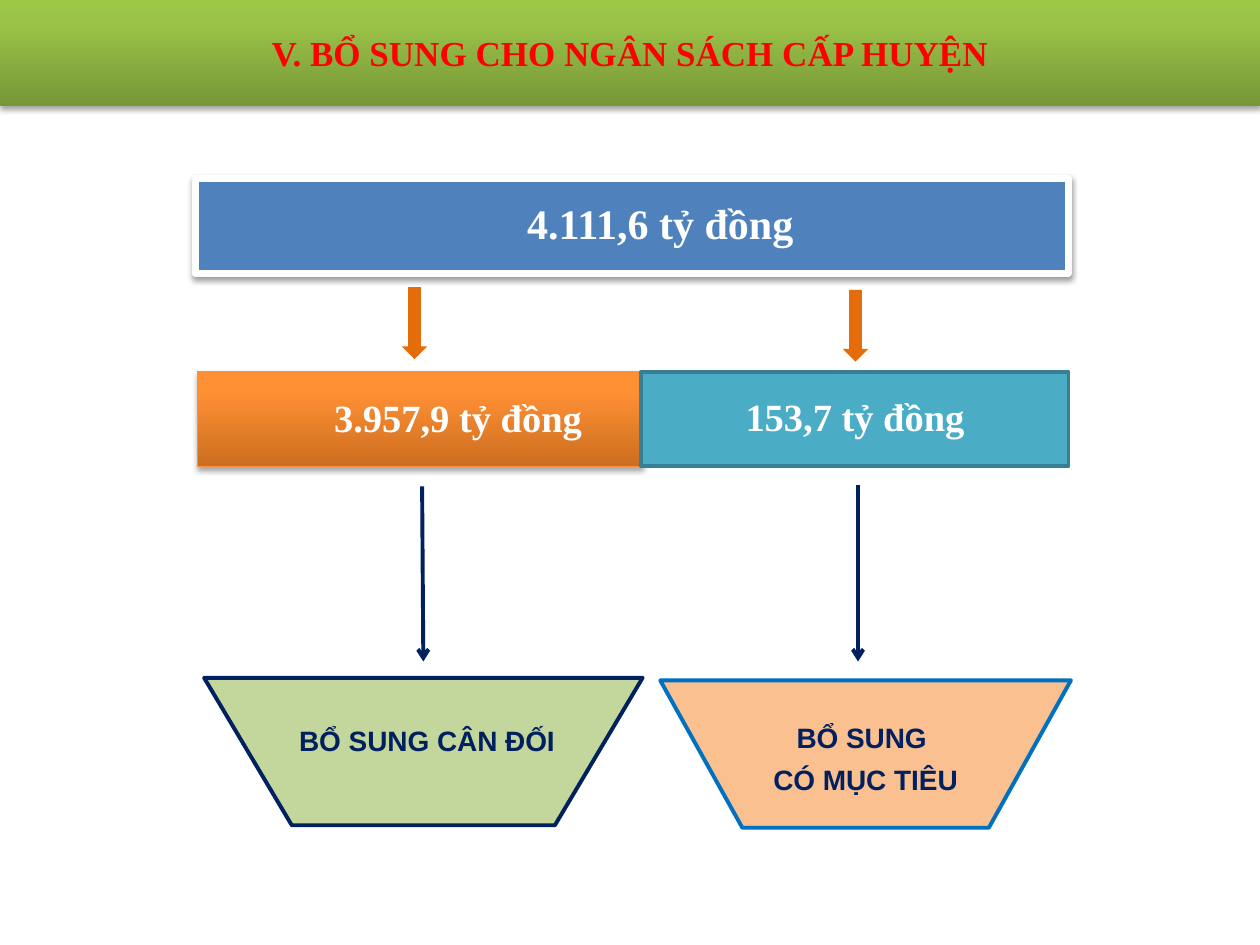
import dataclasses

import lxml.etree
import pptx
import pptx.dml.color
import pptx.enum.shapes
import pptx.enum.text
import pptx.oxml.ns
import pptx.util

Inches = pptx.util.Inches
Pt = pptx.util.Pt
Shape = pptx.enum.shapes.MSO_SHAPE
qn = pptx.oxml.ns.qn


@dataclasses.dataclass(frozen=True)
class Theme:
    serif: str = "Times New Roman"
    sans: str = "Arial"
    title_size: int = 20
    total_size: int = 24
    amount_size: int = 22
    label_size: int = 16
    label_spacing: int = 24
    outline: float = 2.25
    white: str = "FFFFFF"
    red: str = "FF0000"
    navy: str = "002060"
    blue: str = "4F81BD"
    bright_blue: str = "0070C0"
    teal: str = "4BACC6"
    dark_teal: str = "377F92"
    orange: str = "E46C0A"
    orange_edge: str = "F69240"
    pale_green: str = "C3D69B"
    pale_orange: str = "FAC090"
    # Gradients run from bottom to top: position in percent, colour
    green_gradient: tuple = ((0, "779737"), (80, "9BC348"), (100, "9DC746"))
    orange_gradient: tuple = ((0, "CC6E20"), (80, "FF9034"), (100, "FF9136"))


THEME = Theme()


def rgb(color):
    return pptx.dml.color.RGBColor.from_string(color)


def add_child(parent, tag, **attributes):
    values = {name: str(value) for name, value in attributes.items()}
    return lxml.etree.SubElement(parent, qn(tag), values)


def fill_gradient(shape, stops):
    shape.fill.gradient()
    shape.fill.gradient_angle = 90
    stop_list = shape.element.spPr.find(".//" + qn("a:gsLst"))
    stop_list.clear()
    for position, color in stops:
        stop = add_child(stop_list, "a:gs", pos=position * 1000)
        add_child(stop, "a:srgbClr", val=color)


def add_shadow(shape, opacity, distance):
    effects = shape.element.spPr.find(qn("a:effectLst"))
    shadow = add_child(effects, "a:outerShdw", blurRad=Pt(3.1), dist=Pt(distance),
                       dir=90 * 60000, rotWithShape=0)
    color = add_child(shadow, "a:srgbClr", val="000000")
    add_child(color, "a:alpha", val=opacity * 1000)


def add_block(page, kind, place, fill, line=None, width=THEME.outline):
    """Add a preset shape; fill is one colour or a tuple of gradient stops."""
    shape = page.shapes.add_shape(kind, *map(Inches, place))
    shape.shadow.inherit = False
    if isinstance(fill, tuple):
        fill_gradient(shape, fill)
    else:
        shape.fill.solid()
        shape.fill.fore_color.rgb = rgb(fill)
    if line:
        shape.line.color.rgb = rgb(line)
        shape.line.width = Pt(width)
    else:
        shape.line.fill.background()
    return shape


def write(frame, lines, font, size, color, spacing=None):
    frame.word_wrap = True
    for index, line in enumerate(lines):
        para = frame.add_paragraph() if index else frame.paragraphs[0]
        para.text = line
        para.alignment = pptx.enum.text.PP_ALIGN.CENTER
        para.font.name = font
        para.font.size = Pt(size)
        para.font.bold = True
        para.font.color.rgb = rgb(color)
        if spacing:
            para.line_spacing = Pt(spacing)


def add_text(page, place, lines, *style):
    box = page.shapes.add_textbox(*map(Inches, place))
    write(box.text_frame, lines, *style)
    box.text_frame.auto_size = pptx.enum.text.MSO_AUTO_SIZE.SHAPE_TO_FIT_TEXT


def add_arrow(page, start, end):
    arrow = page.shapes.add_connector(pptx.enum.shapes.MSO_CONNECTOR.STRAIGHT,
                                      *map(Inches, start + end))
    arrow.line.color.rgb = rgb(THEME.navy)
    arrow.line.width = Pt(THEME.outline)
    add_child(arrow.line._get_or_add_ln(), "a:tailEnd", type="arrow")
    add_child(arrow.element.spPr, "a:effectLst")


def add_title(page):
    banner = add_block(page, Shape.RECTANGLE, (0, 0, 10, 0.84), THEME.green_gradient)
    add_shadow(banner, 35, 1.8)
    frame = banner.text_frame
    frame.margin_left = frame.margin_right = frame.margin_top = frame.margin_bottom = 0
    frame.vertical_anchor = pptx.enum.text.MSO_ANCHOR.MIDDLE
    write(frame, ["V. BỔ SUNG CHO NGÂN SÁCH CẤP HUYỆN"],
          THEME.serif, THEME.title_size, THEME.red)


def add_total(page):
    bar = add_block(page, Shape.RECTANGLE, (1.55, 1.42, 6.93, 0.75),
                    THEME.blue, THEME.white, 4)
    add_shadow(bar, 38, 1.6)
    add_text(page, (3.08, 1.52, 4.32, 0.5), ["4.111,6 tỷ đồng"],
             THEME.serif, THEME.total_size, THEME.white)


def add_amounts(page):
    balance = add_block(page, Shape.RECTANGLE, (1.57, 2.95, 3.53, 0.75),
                        THEME.orange_gradient, THEME.orange_edge, 0.75)
    add_shadow(balance, 35, 1.8)
    add_block(page, Shape.RECTANGLE, (5.09, 2.95, 3.39, 0.75),
              THEME.teal, THEME.dark_teal)
    style = (THEME.serif, THEME.amount_size, THEME.white)
    add_text(page, (2.18, 3.08, 2.91, 0.47), ["3.957,9 tỷ đồng"], *style)
    add_text(page, (5.09, 3.07, 3.39, 0.47), ["153,7 tỷ đồng"], *style)


def add_purposes(page):
    style = (THEME.sans, THEME.label_size, THEME.navy, THEME.label_spacing)
    add_block(page, Shape.FLOWCHART_MANUAL_OPERATION, (1.62, 5.38, 3.48, 1.17),
              THEME.pale_green, THEME.navy)
    add_text(page, (2.21, 5.63, 2.36, 0.44), ["BỔ SUNG CÂN ĐỐI"], *style)
    add_block(page, Shape.FLOWCHART_MANUAL_OPERATION, (5.24, 5.4, 3.26, 1.17),
              THEME.pale_orange, THEME.bright_blue)
    add_text(page, (5.95, 5.6, 1.84, 0.77), ["BỔ SUNG ", "CÓ MỤC TIÊU"], *style)


def main():
    deck = pptx.Presentation()
    deck.slide_width, deck.slide_height = Inches(10), Inches(7.5)
    page = deck.slides.add_slide(deck.slide_layouts[6])

    # Title and total
    add_title(page)
    add_total(page)

    # Total split into two amounts
    for left, top in ((3.19, 2.28), (6.69, 2.3)):
        add_block(page, Shape.DOWN_ARROW, (left, top, 0.2, 0.57), THEME.orange)
    add_amounts(page)

    # Purpose of each amount
    add_purposes(page)
    add_arrow(page, (3.35, 3.86), (3.36, 5.25))
    add_arrow(page, (6.81, 3.85), (6.81, 5.25))

    deck.save("out.pptx")


if __name__ == "__main__":
    main()
